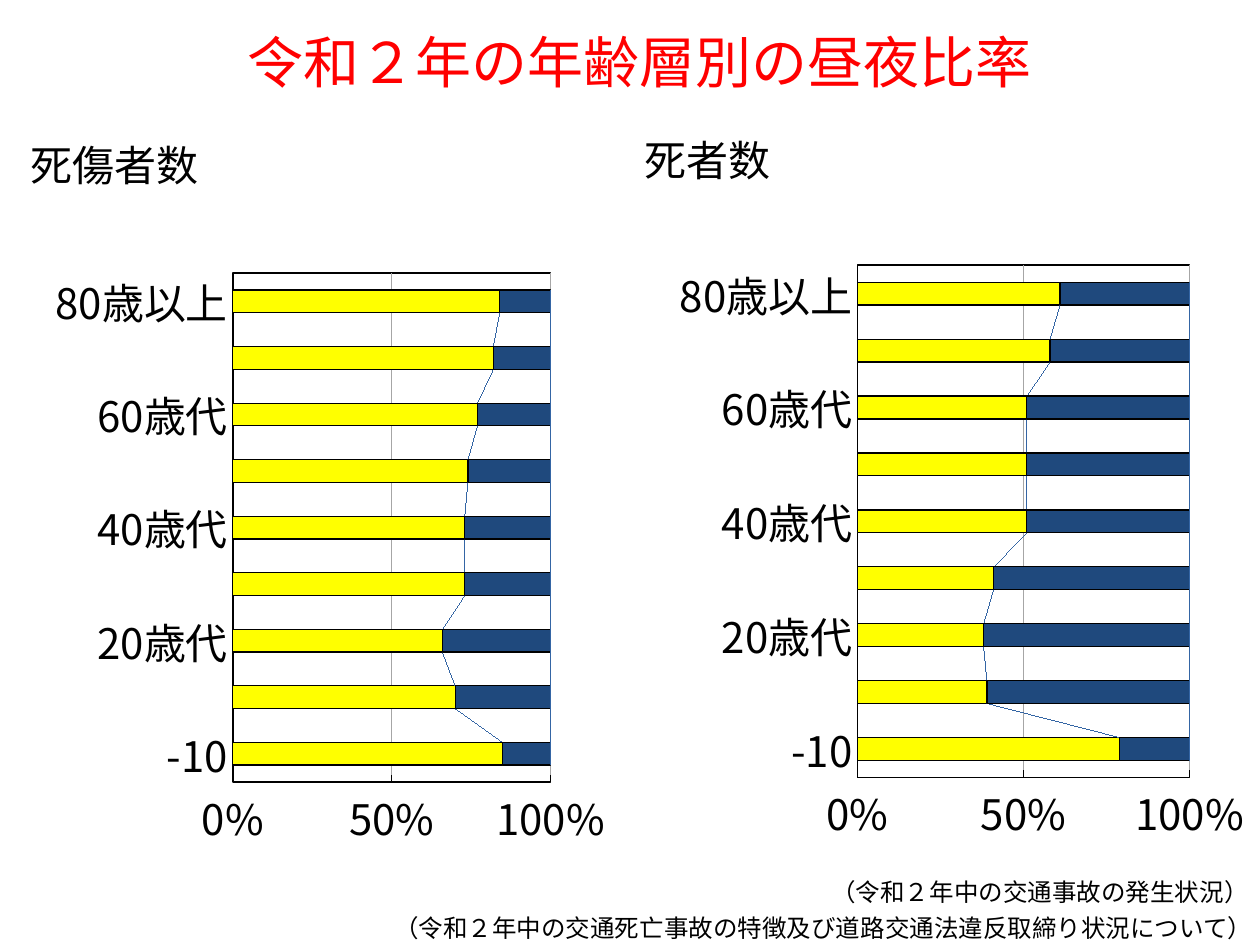
from lxml import etree
from pptx import Presentation
from pptx.chart.data import CategoryChartData
from pptx.dml.color import RGBColor
from pptx.enum.chart import XL_CHART_TYPE, XL_TICK_MARK
from pptx.enum.text import MSO_ANCHOR, PP_ALIGN
from pptx.oxml import parse_xml
from pptx.oxml.ns import nsdecls, qn
from pptx.util import Inches, Pt

STACKED = XL_CHART_TYPE.BAR_STACKED_100
TICK_NONE, TICK_INSIDE = XL_TICK_MARK.NONE, XL_TICK_MARK.INSIDE
LEFT, CENTER = PP_ALIGN.LEFT, PP_ALIGN.CENTER
TOP, MIDDLE = MSO_ANCHOR.TOP, MSO_ANCHOR.MIDDLE

FONT = "Noto Sans CJK JP"
COLORS = {
    "title": "FF0000",
    "text": "000000",
    "day": "FFFF00",
    "night": "1F497D",
    "grid": "A6A6A6",
    "link": "4A7EBB",
}
AGES = ["-10"] + [f"{age}歳代" for age in range(10, 80, 10)] + ["80歳以上"]
CASUALTIES_BY_DAY = [85, 70, 66, 73, 73, 74, 77, 82, 84]
DEATHS_BY_DAY = [79, 39, 38, 41, 51, 51, 51, 58, 61]


def rgb(name):
    return RGBColor.from_string(COLORS[name])


def style_font(font, size, color="text"):
    font.size = Pt(size)
    font.bold = False
    font.name = FONT
    font.color.rgb = rgb(color)


def set_east_asian(root):
    """Give Japanese characters the same typeface as the Latin ones."""
    for latin in list(root.iter(qn("a:latin"))):
        east_asian = etree.Element(qn("a:ea"), typeface=FONT)
        latin.addnext(east_asian)


def style_line(line, color="text", width=0.75):
    line.color.rgb = rgb(color)
    line.width = Pt(width)


def add_text(page, text, left, top, width, height, size=14, color="text",
             align=LEFT, anchor=TOP, wrap=False):
    box = page.shapes.add_textbox(Inches(left), Inches(top),
                                  Inches(width), Inches(height))
    frame = box.text_frame
    frame.word_wrap = wrap
    frame.vertical_anchor = anchor
    para = frame.paragraphs[0]
    para.alignment = align
    span = para.add_run()
    span.text = text
    style_font(span.font, size, color)
    set_east_asian(box.element)


def line_properties(color, width):
    return (f'<c:spPr {nsdecls("c", "a")}><a:noFill/>'
            f'<a:ln w="{Pt(width)}"><a:solidFill><a:srgbClr val="{COLORS[color]}"/>'
            f'</a:solidFill></a:ln></c:spPr>')


def set_plot_layout(plot_area, left, top, width, height):
    for old in plot_area.findall(qn("c:layout")):
        plot_area.remove(old)
    values = {"x": left, "y": top, "w": width, "h": height}
    parts = "".join(f'<c:{key} val="{value}"/>' for key, value in values.items())
    plot_area.insert(0, parse_xml(
        f'<c:layout {nsdecls("c")}><c:manualLayout><c:layoutTarget val="inner"/>'
        f'<c:xMode val="edge"/><c:yMode val="edge"/>{parts}'
        f'</c:manualLayout></c:layout>'))


def add_ratio_chart(page, day_shares, left, top, width, height, plot_top, plot_height):
    data = CategoryChartData()
    data.categories = AGES
    data.add_series("昼", day_shares)
    data.add_series("夜", [100 - share for share in day_shares])
    chart = page.shapes.add_chart(STACKED, Inches(left), Inches(top),
                                  Inches(width), Inches(height), data).chart
    chart.has_title = False
    chart.has_legend = False
    style_font(chart.font, 24)

    # Bars
    plot = chart.plots[0]
    plot.gap_width = 150
    plot.overlap = 100
    plot.vary_by_categories = False
    for series, color in zip(plot.series, ("day", "night")):
        series.format.fill.solid()
        series.format.fill.fore_color.rgb = rgb(color)
        style_line(series.format.line)

    # Axes
    ages, shares = chart.category_axis, chart.value_axis
    for axis, tick in ((ages, TICK_NONE), (shares, TICK_INSIDE)):
        axis.major_tick_mark = tick
        axis.minor_tick_mark = TICK_NONE
        style_font(axis.tick_labels.font, 24)
        style_line(axis.format.line)
    ages.has_major_gridlines = False
    shares.minimum_scale, shares.maximum_scale, shares.major_unit = 0, 1, 0.5
    shares.has_major_gridlines = True
    style_line(shares.major_gridlines.format.line, "grid", 0.37)
    shares.tick_labels.number_format = "0%"
    shares.tick_labels.number_format_is_linked = False

    # Plot frame and the lines that link neighbouring bars
    root = chart.element
    plot_area = root.find(".//" + qn("c:plotArea"))
    set_plot_layout(plot_area, 0.37, plot_top, 0.54, plot_height)
    plot_area.append(parse_xml(line_properties("text", 1)))
    root.find(".//" + qn("c:overlap")).addnext(parse_xml(
        f'<c:serLines {nsdecls("c")}>{line_properties("link", 0.75)}</c:serLines>'))
    set_east_asian(root)


def main():
    deck = Presentation()
    deck.slide_width, deck.slide_height = Inches(10), Inches(7.5)
    page = deck.slides.add_slide(deck.slide_layouts[6])

    # Heading
    add_text(page, "令和２年の年齢層別の昼夜比率", 0.75, 0.07, 8.66, 0.83,
             size=32, color="title", align=CENTER, anchor=MIDDLE, wrap=True)

    # Casualties on the left, deaths on the right
    add_ratio_chart(page, CASUALTIES_BY_DAY, 0.12, 1.5, 4.68, 5.57, 0.12, 0.725)
    add_text(page, "死傷者数", 0.14, 1.06, 1.55, 0.5, size=24)
    add_ratio_chart(page, DEATHS_BY_DAY, 5, 1.47, 4.88, 5.57, 0.114, 0.73)
    add_text(page, "死者数", 5.02, 1.02, 1.21, 0.5, size=24)

    # Sources
    add_text(page, "（令和２年中の交通事故の発生状況）", 6.5, 6.91, 3.54, 0.34)
    add_text(page, "（令和２年中の交通死亡事故の特徴及び道路交通法違反取締り状況について）",
             3.03, 7.2, 7.07, 0.34)

    deck.save("out.pptx")


if __name__ == "__main__":
    main()
